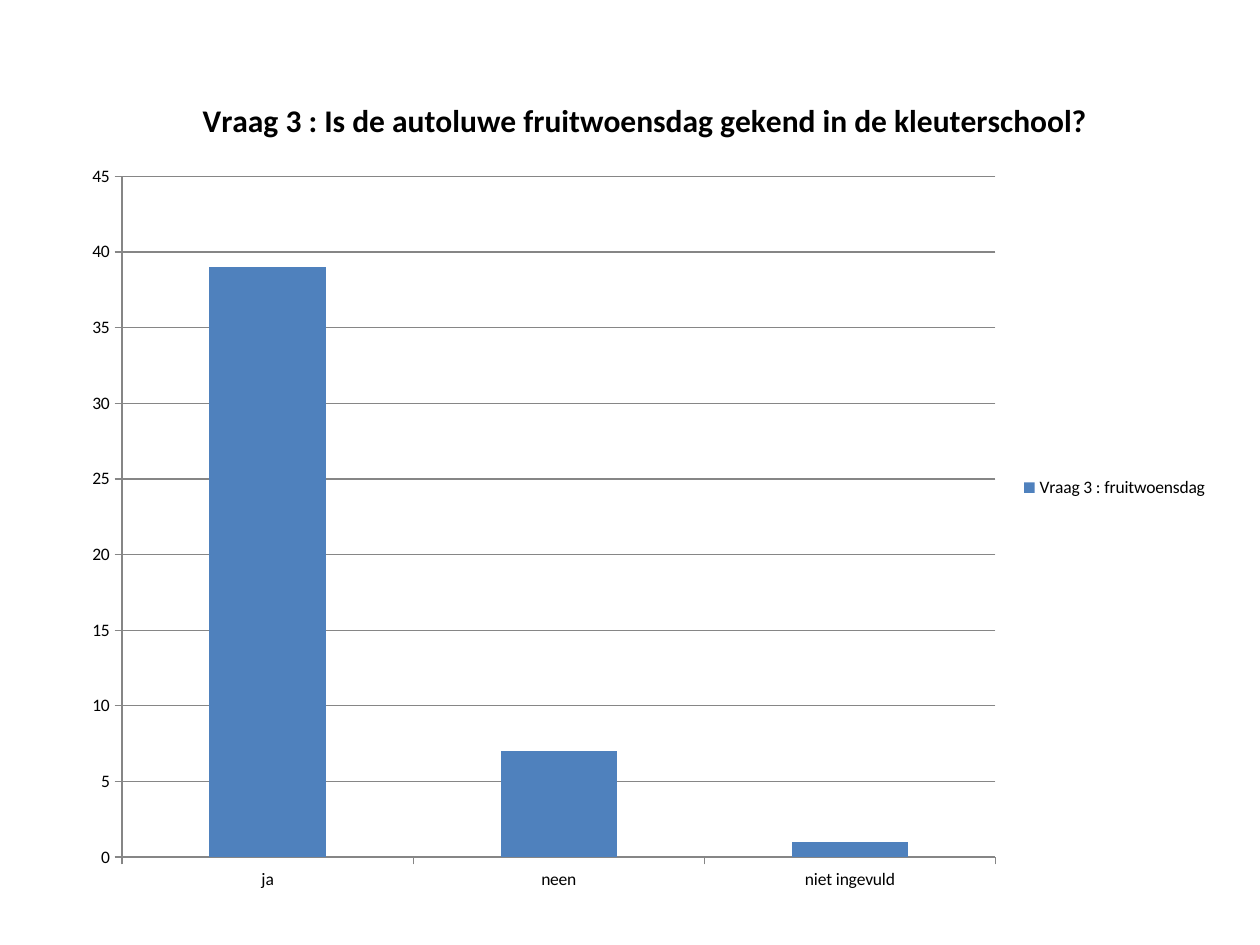
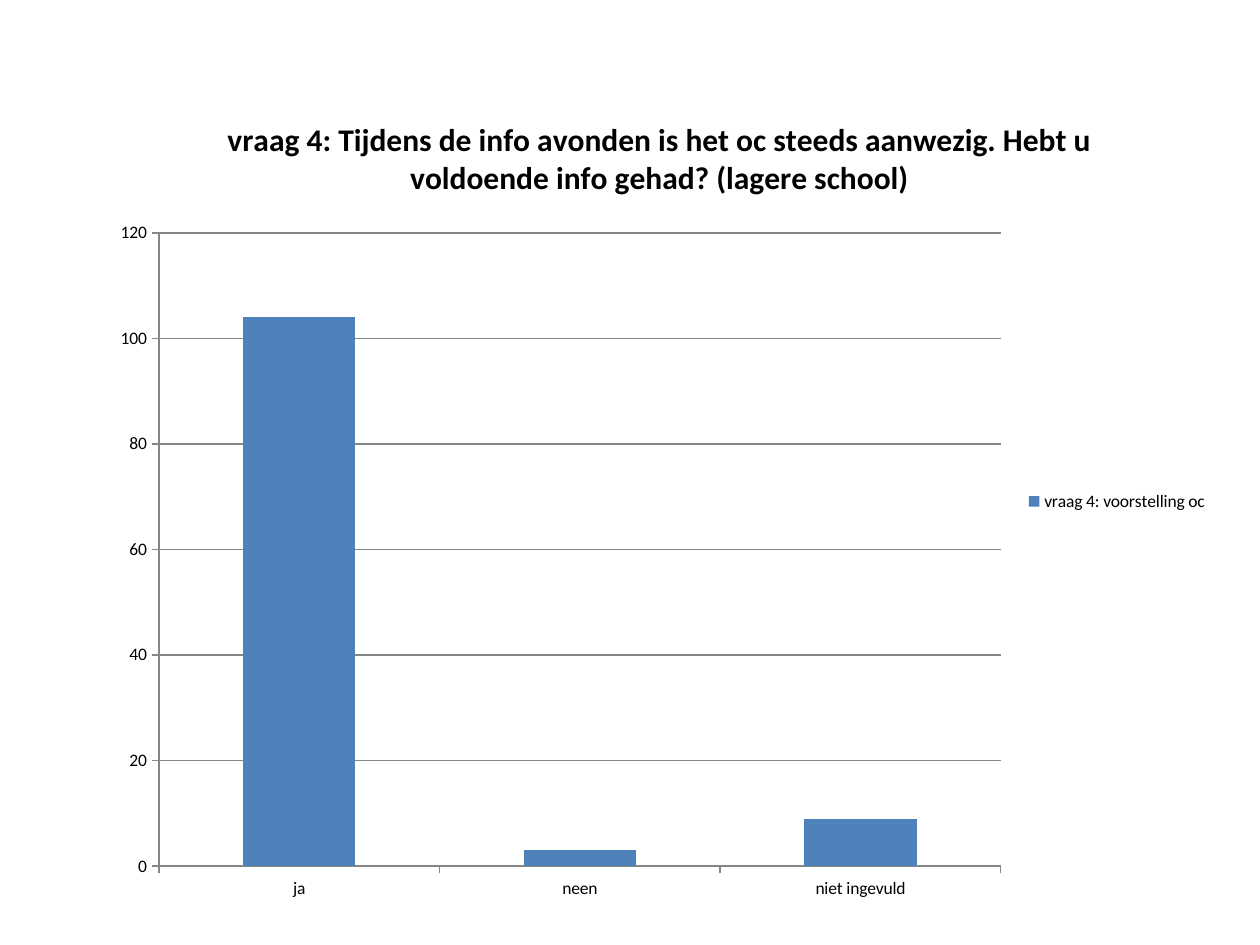
from pptx import Presentation
from pptx.chart.data import CategoryChartData
from pptx.dml.color import RGBColor
from pptx.enum.chart import XL_CHART_TYPE as ChartType
from pptx.enum.chart import XL_LEGEND_POSITION as LegendPosition
from pptx.enum.chart import XL_TICK_MARK as TickMark
from pptx.util import Inches, Pt

BLACK = RGBColor(0x00, 0x00, 0x00)
BAR_BLUE = RGBColor(0x4F, 0x81, 0xBD)
AXIS_GRAY = RGBColor(0x86, 0x86, 0x86)

LABEL_FORMAT = {"name": "Calibri", "size": Pt(10), "bold": False}
TITLE_FORMAT = {"name": "Calibri", "size": Pt(18), "bold": True}
ANSWERS = ["ja", "neen", "niet ingevuld"]

QUESTIONS = [
    {
        "title": "Vraag 3 : Is de autoluwe fruitwoensdag gekend in de kleuterschool?",
        "series": "Vraag 3 : fruitwoensdag",
        "counts": [39, 7, 1],
        "frame": (0.55, 0.55, 9.14, 6.64),
        "scale": (45, 5),
    },
    {
        "title": "vraag 4: Tijdens de info avonden is het oc steeds aanwezig. "
                 "Hebt u voldoende info gehad? (lagere school)",
        "series": "vraag 4: voorstelling oc",
        "counts": [104, 3, 9],
        "frame": (0.78, 0.7, 8.91, 6.56),
        "scale": (120, 20),
    },
]


def format_font(font, values):
    for name, value in values.items():
        setattr(font, name, value)
    font.color.rgb = BLACK


def format_line(line):
    line.color.rgb = AXIS_GRAY
    line.width = Pt(0.75)


presentation = Presentation()
presentation.slide_width = Inches(10)
presentation.slide_height = Inches(7.5)
blank_layout = presentation.slide_layouts[6]

for question in QUESTIONS:
    slide = presentation.slides.add_slide(blank_layout)
    chart_data = CategoryChartData()
    chart_data.categories = ANSWERS
    chart_data.add_series(question["series"], question["counts"])
    frame = [Inches(length) for length in question["frame"]]
    chart = slide.shapes.add_chart(ChartType.COLUMN_CLUSTERED, *frame, chart_data).chart
    format_font(chart.font, LABEL_FORMAT)

    chart.has_title = True
    chart.chart_title.include_in_layout = False
    title = chart.chart_title.text_frame
    title.text = question["title"]
    format_font(title.paragraphs[0].runs[0].font, TITLE_FORMAT)

    chart.has_legend = True
    chart.legend.position = LegendPosition.RIGHT
    chart.legend.include_in_layout = False

    plot = chart.plots[0]
    plot.vary_by_categories = False
    plot.gap_width = 150
    bars = plot.series[0].format.fill
    bars.solid()
    bars.fore_color.rgb = BAR_BLUE

    for axis in (chart.category_axis, chart.value_axis):
        axis.major_tick_mark = TickMark.OUTSIDE
        axis.minor_tick_mark = TickMark.NONE
        format_line(axis.format.line)

    value_axis = chart.value_axis
    value_axis.minimum_scale = 0
    value_axis.maximum_scale, value_axis.major_unit = question["scale"]
    value_axis.has_major_gridlines = True
    format_line(value_axis.major_gridlines.format.line)

presentation.save("out.pptx")
